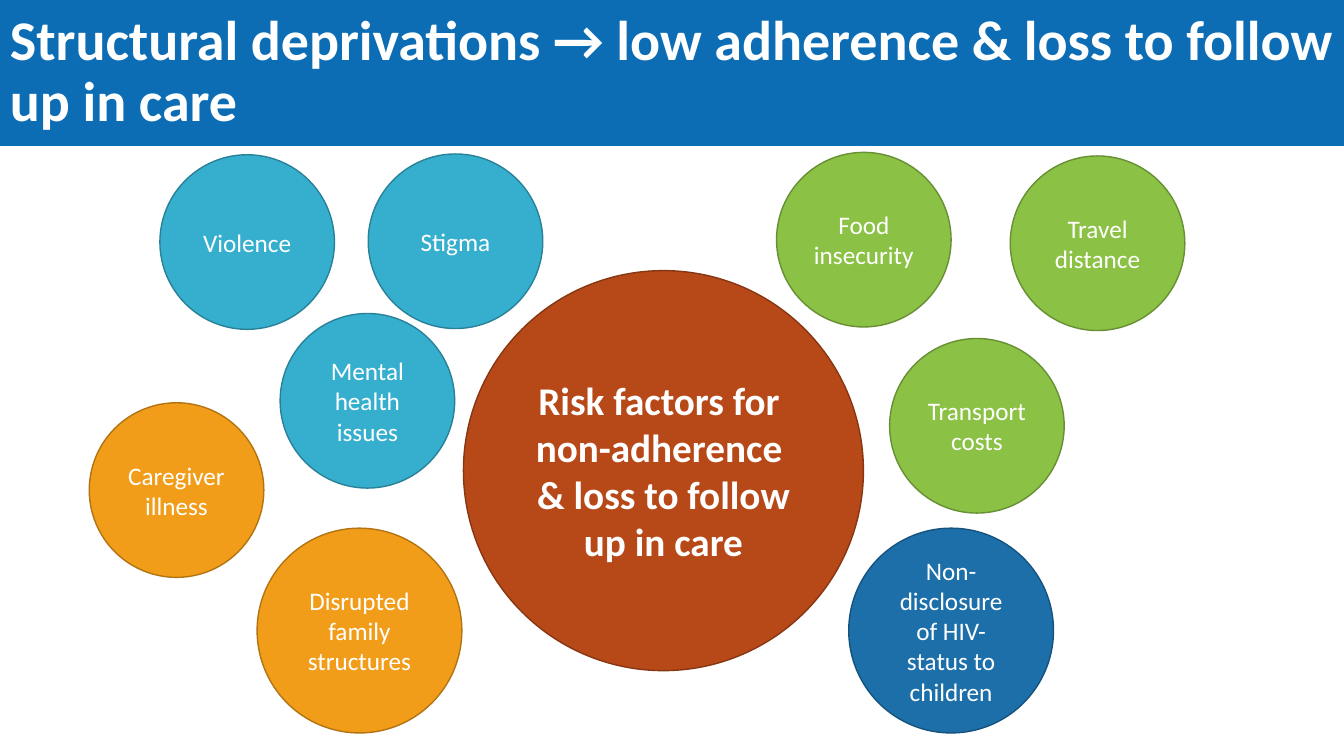
import pptx
import pptx.util
import pptx.dml.color
import pptx.enum.shapes
import pptx.enum.text

Cm = pptx.util.Cm
Pt = pptx.util.Pt
RGBColor = pptx.dml.color.RGBColor
Shape = pptx.enum.shapes.MSO_SHAPE
Align = pptx.enum.text.PP_ALIGN
Anchor = pptx.enum.text.MSO_ANCHOR

WHITE = RGBColor(0xFF, 0xFF, 0xFF)
BANNER = RGBColor(0x0C, 0x6D, 0xB5)
RUST = RGBColor(0xB7, 0x49, 0x19)
RUST_EDGE = RGBColor(0x87, 0x36, 0x12)
GREEN = RGBColor(0x8B, 0xC1, 0x45)
GREEN_EDGE = RGBColor(0x67, 0x8F, 0x33)
AMBER = RGBColor(0xF1, 0x9D, 0x19)
AMBER_EDGE = RGBColor(0xB2, 0x74, 0x12)
TEAL = RGBColor(0x36, 0xAF, 0xCE)
TEAL_EDGE = RGBColor(0x28, 0x81, 0x98)
BLUE = RGBColor(0x1D, 0x6F, 0xA9)
BLUE_EDGE = RGBColor(0x15, 0x52, 0x7D)

WIDTH, HEIGHT = 33.87, 19.05
SMALL, MEDIUM, LARGE = 4.4, 5.16, 10.08


def write(shape, text, size=18, bold=False, align=Align.CENTER, space=1.0, font="Calibri"):
    frame = shape.text_frame
    frame.word_wrap = True
    frame.vertical_anchor = Anchor.MIDDLE
    para = frame.paragraphs[0]
    para.alignment = align
    para.line_spacing = space
    for i, line in enumerate(text.split("\n")):
        if i:
            para.add_line_break()
        run = para.add_run()
        run.text = line
        run.font.name = font
        run.font.size = Pt(size)
        run.font.bold = bold
        run.font.color.rgb = WHITE


class Deck:
    def __init__(self):
        self.show = pptx.Presentation()
        self.show.slide_width = Cm(WIDTH)
        self.show.slide_height = Cm(HEIGHT)
        self.slide = self.show.slides.add_slide(self.show.slide_layouts[6])

    def block(self, kind, left, top, width, height, fill):
        shape = self.slide.shapes.add_shape(kind, Cm(left), Cm(top), Cm(width), Cm(height))
        shape.shadow.inherit = False
        shape.fill.solid()
        shape.fill.fore_color.rgb = fill
        return shape

    def banner(self, text, height):
        shape = self.block(Shape.RECTANGLE, 0, 0, WIDTH, height, BANNER)
        shape.line.fill.background()
        write(shape, text, size=40, bold=True, align=Align.LEFT, space=0.9)

    def bubble(self, text, left, top, width, fill, edge, **style):
        shape = self.block(Shape.OVAL, left, top, width, width, fill)
        shape.line.color.rgb = edge
        shape.line.width = Pt(1)
        write(shape, text, **style)


def main():
    deck = Deck()
    deck.bubble(
        "Risk factors for \nnon-adherence \n& loss to follow up in care",
        11.68, 6.82, LARGE, RUST, RUST_EDGE, size=28, bold=True,
    )
    factors = [
        ("Transport costs", 22.42, 8.53, SMALL, GREEN, GREEN_EDGE),
        ("Travel distance", 25.46, 3.93, SMALL, GREEN, GREEN_EDGE),
        ("Food insecurity", 19.57, 3.84, SMALL, GREEN, GREEN_EDGE),
        ("Disrupted family structures", 6.48, 13.31, MEDIUM, AMBER, AMBER_EDGE),
        ("Mental health issues", 7.06, 7.9, SMALL, TEAL, TEAL_EDGE),
        ("Stigma", 9.28, 3.88, SMALL, TEAL, TEAL_EDGE),
        ("Caregiver illness", 2.25, 10.15, SMALL, AMBER, AMBER_EDGE),
        ("Non-disclosure of HIV-status to children", 21.39, 13.31, MEDIUM, BLUE, BLUE_EDGE),
        ("Violence", 4.03, 3.9, SMALL, TEAL, TEAL_EDGE),
    ]
    for factor in factors:
        deck.bubble(*factor)
    deck.banner("Structural deprivations → low adherence & loss to follow up in care", 3.68)
    deck.show.save("out.pptx")


if __name__ == "__main__":
    main()
